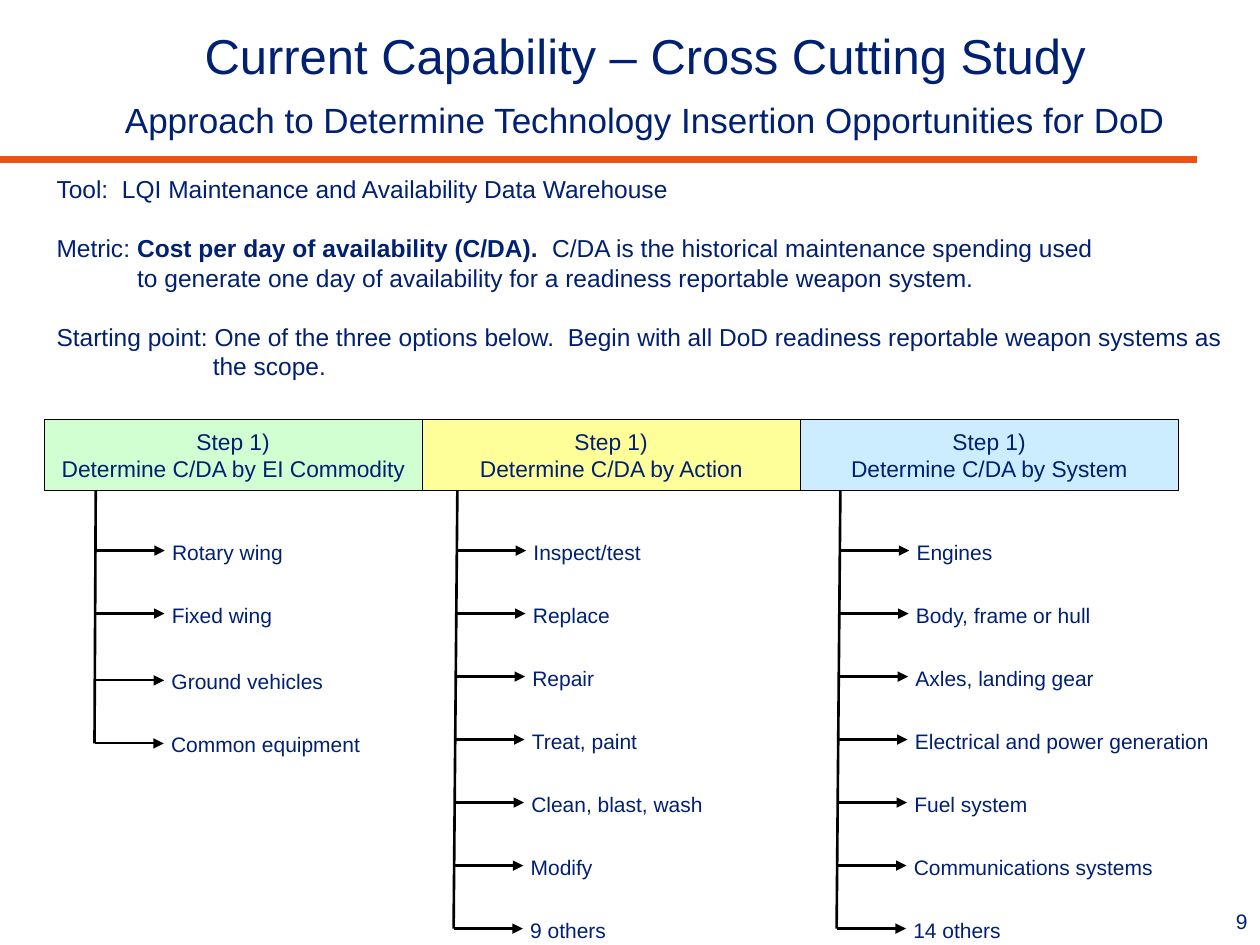
from dataclasses import dataclass

from lxml import etree
from pptx import Presentation
from pptx.dml.color import RGBColor
from pptx.enum.shapes import MSO_CONNECTOR, MSO_SHAPE
from pptx.enum.text import MSO_ANCHOR, MSO_AUTO_SIZE, PP_ALIGN
from pptx.oxml.ns import qn
from pptx.util import Inches, Pt

STRAIGHT = MSO_CONNECTOR.STRAIGHT
RECTANGLE = MSO_SHAPE.RECTANGLE
TOP, MIDDLE = MSO_ANCHOR.TOP, MSO_ANCHOR.MIDDLE
LEFT, CENTER, RIGHT = PP_ALIGN.LEFT, PP_ALIGN.CENTER, PP_ALIGN.RIGHT
NO_FIT = MSO_AUTO_SIZE.NONE
TITLE_ONLY = 5


@dataclass(frozen=True)
class Theme:
    font: str = "Arial"
    ink: str = "002072"
    rule: str = "EF5114"
    black: str = "000000"
    title: int = 28
    subtitle: int = 20
    body: int = 14
    step: int = 13
    item: int = 12


THEME = Theme()
WIDTH, HEIGHT = 10, 7.5
ROW = 0.5
FIRST_ROW = 4.37
ARROW = 0.55
LABEL_SHIFT = 0.51
LABEL_HEIGHT = 0.3
STEPS_BOX = (0.35, 3.33, 9, 0.56)

BODY = [
    (0, [("Tool:  LQI Maintenance and Availability Data Warehouse", False)]),
    (0.64, [
        ("Metric: ", False),
        ("Cost per day of availability (C/DA).  ", True),
        ("C/DA is the historical maintenance spending used\n"
         "to generate one day of availability for a readiness reportable weapon system.", False),
    ]),
    (1.24, [
        ("Starting point: One of the three options below.  "
         "Begin with all DoD readiness reportable weapon systems as\nthe scope.", False),
    ]),
]

BRANCHES = [
    dict(heading="Step 1)\nDetermine C/DA by EI Commodity", fill="D1FFD1",
         stem=0.76, lean=0.01, label_width=1.75, rows=(0, 1, 2.06, 3.06),
         items=("Rotary wing", "Fixed wing", "Ground vehicles", "Common equipment")),
    dict(heading="Step 1)\nDetermine C/DA by Action", fill="FFFF99",
         stem=3.63, lean=0.03, label_width=1.6, rows=range(7),
         items=("Inspect/test", "Replace", "Repair", "Treat, paint",
                "Clean, blast, wash", "Modify", "9 others")),
    dict(heading="Step 1)\nDetermine C/DA by System", fill="CCECFF",
         stem=6.67, lean=0.03, label_width=2.6, rows=range(7),
         items=("Engines", "Body, frame or hull", "Axles, landing gear",
                "Electrical and power generation", "Fuel system",
                "Communications systems", "14 others")),
]


def color(value):
    return RGBColor.from_string(value)


def write(para, text, size, bold=False, align=LEFT, spacing=None):
    para.alignment = align
    if spacing:
        para.line_spacing = Pt(spacing)
    for index, line in enumerate(text.split("\n")):
        if index:
            para.add_line_break()
        span = para.add_run()
        span.text = line
        span.font.name = THEME.font
        span.font.size = Pt(size)
        span.font.bold = bold
        span.font.color.rgb = color(THEME.ink)


def add_box(page, box):
    frame = page.shapes.add_textbox(*map(Inches, box)).text_frame
    frame.word_wrap = True
    return frame


def add_line(page, start, end, tint, weight, arrow=False):
    line = page.shapes.add_connector(STRAIGHT, *map(Inches, (*start, *end)))
    line.line.color.rgb = color(tint)
    line.line.width = Pt(weight)
    properties = line.element.spPr
    if arrow:
        etree.SubElement(properties.find(qn("a:ln")), qn("a:tailEnd"), type="triangle")
    etree.SubElement(properties, qn("a:effectLst"))


def add_title(page, box):
    title = page.shapes.title
    title.left, title.top, title.width, title.height = map(Inches, box)
    frame = title.text_frame
    frame.auto_size = NO_FIT
    frame.word_wrap = True
    frame.vertical_anchor = TOP
    para = frame.paragraphs[0]
    write(para, "Current Capability – Cross Cutting Study", THEME.title, align=CENTER, spacing=32.2)
    para.add_line_break()
    write(para, "Approach to Determine Technology Insertion Opportunities for DoD",
          THEME.subtitle, align=CENTER, spacing=32.2)


def add_body(page, box):
    frame = add_box(page, box)
    for index, (indent, spans) in enumerate(BODY):
        para = frame.add_paragraph() if index else frame.paragraphs[0]
        if index:
            para.space_before = Pt(16.9)
        if indent:
            properties = para._p.get_or_add_pPr()
            properties.set("marL", str(Inches(indent)))
            properties.set("indent", str(-Inches(indent)))
        for text, bold in spans:
            write(para, text, THEME.body, bold=bold, spacing=16.9)


def add_step(page, box, heading, fill):
    step = page.shapes.add_shape(RECTANGLE, *map(Inches, box))
    step.shadow.inherit = False
    step.fill.solid()
    step.fill.fore_color.rgb = color(fill)
    step.line.color.rgb = color(THEME.black)
    step.line.width = Pt(0.5)
    frame = step.text_frame
    frame.word_wrap = True
    frame.vertical_anchor = MIDDLE
    frame.margin_left = frame.margin_right = 0
    write(frame.paragraphs[0], heading, THEME.step, align=CENTER, spacing=15.5)


def add_branch(page, box, heading, fill, stem, lean, label_width, rows, items):
    add_step(page, box, heading, fill)
    top = box[1] + box[3]
    bottom = FIRST_ROW + rows[-1] * ROW
    add_line(page, (stem, top), (stem - lean, bottom), THEME.black, 1.5)
    for row, item in zip(rows, items):
        y = FIRST_ROW + row * ROW
        x = stem - lean * (y - top) / (bottom - top)
        add_line(page, (x, y), (x + ARROW, y), THEME.black, 1.25, arrow=True)
        label = add_box(page, (x + LABEL_SHIFT, y - 0.14, label_width, LABEL_HEIGHT))
        write(label.paragraphs[0], item, THEME.item)


def add_steps(page, box):
    left, top, width, height = box
    column = width / len(BRANCHES)
    for index, branch in enumerate(BRANCHES):
        add_branch(page, (left + index * column, top, column, height), **branch)


def main():
    deck = Presentation()
    deck.slide_width, deck.slide_height = Inches(WIDTH), Inches(HEIGHT)
    page = deck.slides.add_slide(deck.slide_layouts[TITLE_ONLY])
    for y in (1.28, 1.25):
        add_line(page, (0, y), (0.95 * WIDTH, y), THEME.rule, 2.25)
    add_title(page, (0.86, 0.17, 8.52, 0.95))
    add_body(page, (0.35, 1.33, 9.55, 1.75))
    add_steps(page, STEPS_BOX)
    number = add_box(page, (7.68, 7.16, 2.32, 0.34))
    write(number.paragraphs[0], "9", THEME.item, align=RIGHT)
    deck.save("out.pptx")


if __name__ == "__main__":
    main()
